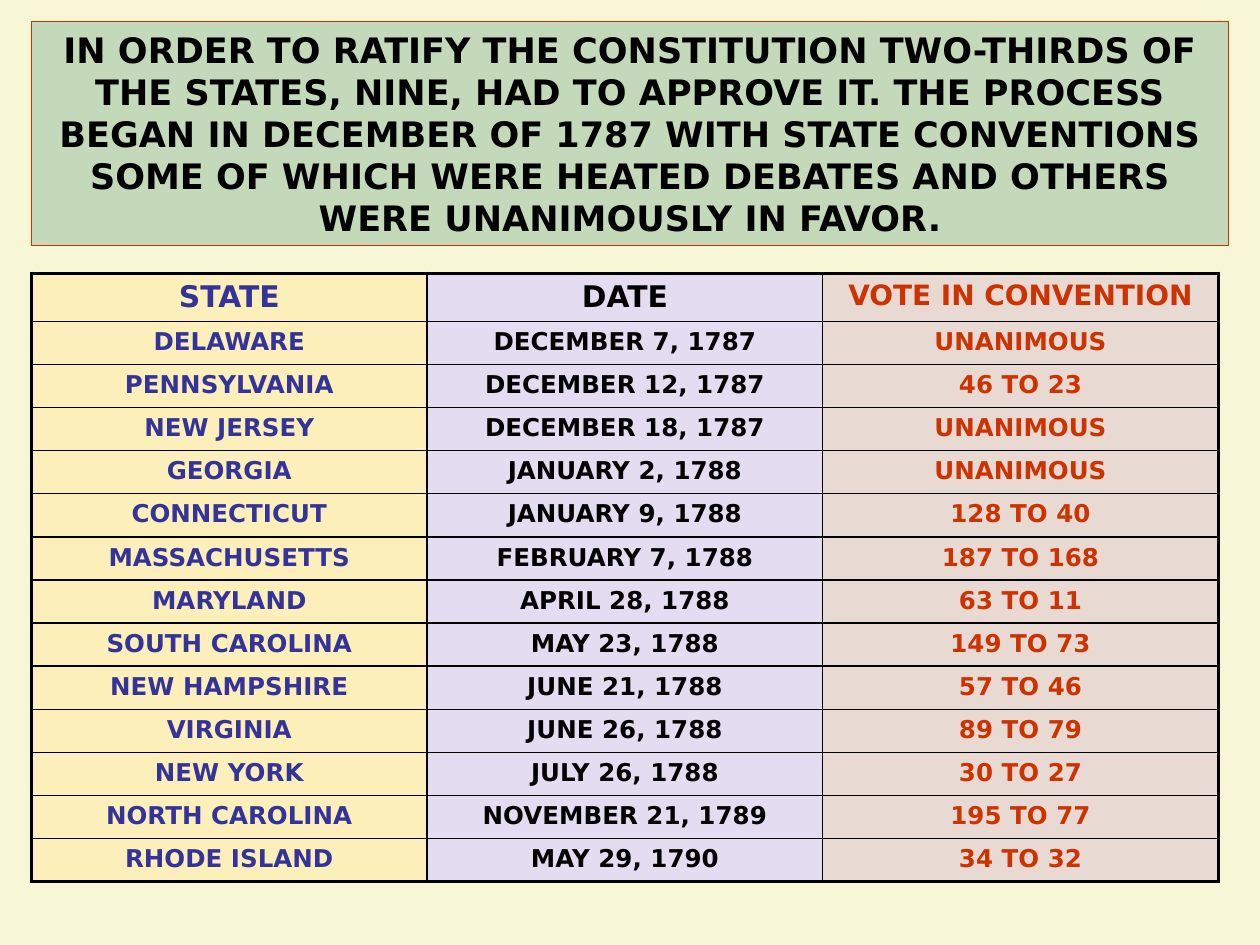
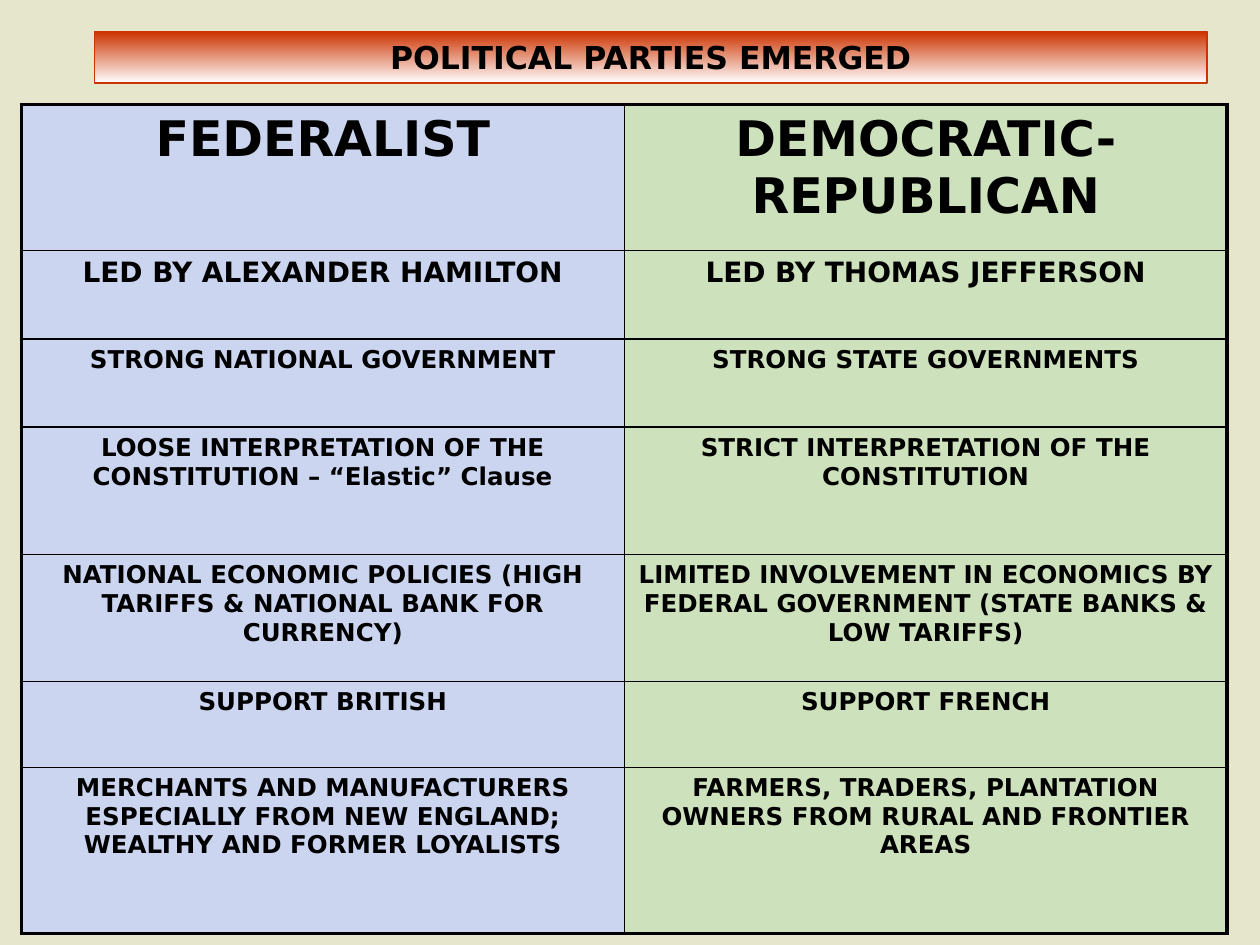
import pptx
import pptx.dml.color
import pptx.enum.shapes
import pptx.enum.text
import pptx.oxml
import pptx.oxml.ns
import pptx.util

Inches = pptx.util.Inches
Pt = pptx.util.Pt
RGBColor = pptx.dml.color.RGBColor

BLACK = RGBColor(0x00, 0x00, 0x00)
WHITE = RGBColor(0xFF, 0xFF, 0xFF)
RED = RGBColor(0xCC, 0x33, 0x00)
BLUE = RGBColor(0x33, 0x33, 0x99)
CREAM = RGBColor(0xF7, 0xF7, 0xD6)
KHAKI = RGBColor(0xE6, 0xE6, 0xCC)
SAGE = RGBColor(0xC4, 0xD8, 0xBA)
YELLOW = RGBColor(0xFC, 0xEF, 0xBA)
LILAC = RGBColor(0xE4, 0xDC, 0xF0)
ROSE = RGBColor(0xE9, 0xD9, 0xD3)
SKY = RGBColor(0xCC, 0xD5, 0xF0)
GREEN = RGBColor(0xCE, 0xE1, 0xBD)

RATIFICATION = [
    ("STATE", "DATE", "VOTE IN CONVENTION"),
    ("DELAWARE", "DECEMBER 7, 1787", "UNANIMOUS"),
    ("PENNSYLVANIA", "DECEMBER 12, 1787", "46 TO 23"),
    ("NEW JERSEY", "DECEMBER 18, 1787", "UNANIMOUS"),
    ("GEORGIA", "JANUARY 2, 1788", "UNANIMOUS"),
    ("CONNECTICUT", "JANUARY 9, 1788", "128 TO 40"),
    ("MASSACHUSETTS", "FEBRUARY 7, 1788", "187 TO 168"),
    ("MARYLAND", "APRIL 28, 1788", "63 TO 11"),
    ("SOUTH CAROLINA", "MAY 23, 1788", "149 TO 73"),
    ("NEW HAMPSHIRE", "JUNE 21, 1788", "57 TO 46"),
    ("VIRGINIA", "JUNE 26, 1788", "89 TO 79"),
    ("NEW YORK", "JULY 26, 1788", "30 TO 27"),
    ("NORTH CAROLINA", "NOVEMBER 21, 1789", "195 TO 77"),
    ("RHODE ISLAND", "MAY 29, 1790", "34 TO 32"),
]

PARTIES = [
    ("FEDERALIST", "DEMOCRATIC-REPUBLICAN"),
    ("LED BY ALEXANDER HAMILTON", "LED BY THOMAS JEFFERSON"),
    ("STRONG NATIONAL GOVERNMENT", "STRONG STATE GOVERNMENTS"),
    ("LOOSE INTERPRETATION OF THE CONSTITUTION – “Elastic” Clause",
     "STRICT INTERPRETATION OF THE CONSTITUTION"),
    ("NATIONAL ECONOMIC POLICIES (HIGH TARIFFS & NATIONAL BANK FOR CURRENCY)",
     "LIMITED INVOLVEMENT IN ECONOMICS BY FEDERAL GOVERNMENT (STATE BANKS & LOW TARIFFS)"),
    ("SUPPORT BRITISH", "SUPPORT FRENCH"),
    ("MERCHANTS AND MANUFACTURERS ESPECIALLY FROM NEW ENGLAND; WEALTHY AND FORMER LOYALISTS",
     "FARMERS, TRADERS, PLANTATION OWNERS FROM RURAL AND FRONTIER AREAS"),
]


class Deck:
    font_name = "DejaVu Sans"
    outer_border = Pt(2.25)
    inner_border = Pt(1)

    def __init__(self):
        self.presentation = pptx.Presentation()
        self.presentation.slide_width = Inches(10)
        self.presentation.slide_height = Inches(7.5)
        self.page = None

    def add_page(self, background):
        self.page = self.presentation.slides.add_slide(self.presentation.slide_layouts[6])
        fill = self.page.background.fill
        fill.solid()
        fill.fore_color.rgb = background

    def set_text(self, frame, text, size, color):
        para = frame.paragraphs[0]
        para.text = text
        para.alignment = pptx.enum.text.PP_ALIGN.CENTER
        para.font.name = self.font_name
        para.font.size = Pt(size)
        para.font.bold = True
        para.font.color.rgb = color

    def add_banner(self, place, text, size, colors):
        box = self.page.shapes.add_shape(
            pptx.enum.shapes.MSO_SHAPE.RECTANGLE, *map(Inches, place))
        box.shadow.inherit = False
        if len(colors) == 1:
            box.fill.solid()
            box.fill.fore_color.rgb = colors[0]
        else:
            box.fill.gradient()
            box.fill.gradient_angle = 270
            for stop, color in zip(box.fill.gradient_stops, colors):
                stop.color.rgb = color
        box.line.color.rgb = RED
        box.line.width = Pt(0.75)
        frame = box.text_frame
        frame.word_wrap = True
        frame.vertical_anchor = pptx.enum.text.MSO_ANCHOR.MIDDLE
        self.set_text(frame, text, size, BLACK)

    def add_borders(self, cell, outer_sides):
        properties = cell._tc.get_or_add_tcPr()
        for index, side in enumerate("LRTB"):
            width = self.outer_border if side in outer_sides else self.inner_border
            line = pptx.oxml.parse_xml(
                f'<a:ln{side} {pptx.oxml.ns.nsdecls("a")} w="{width}">'
                f'<a:solidFill><a:srgbClr val="{BLACK}"/></a:solidFill></a:ln{side}>')
            properties.insert(index, line)

    def add_table(self, place, rows, heights, fills, colors, size_of):
        row_count, column_count = len(rows), len(fills)
        table = self.page.shapes.add_table(
            row_count, column_count, *map(Inches, place)).table
        table.first_row = table.horz_banding = False
        for column in table.columns:
            column.width = Inches(place[2] / column_count)
        for row, height in zip(table.rows, heights):
            row.height = Inches(height)
        for row_index, texts in enumerate(rows):
            for column_index, text in enumerate(texts):
                cell = table.cell(row_index, column_index)
                cell.fill.solid()
                cell.fill.fore_color.rgb = fills[column_index]
                edges = {"L": column_index == 0, "R": column_index == column_count - 1,
                         "T": row_index == 0, "B": row_index == row_count - 1}
                self.add_borders(cell, [side for side, outer in edges.items() if outer])
                self.set_text(cell.text_frame, text, size_of(row_index, column_index),
                              colors[column_index])


def ratification_size(row, column):
    if row > 0:
        return 14
    return 16 if column == 2 else 17


def party_size(row, column):
    return {0: 28, 1: 16}.get(row, 14)


def main():
    deck = Deck()

    deck.add_page(CREAM)
    deck.add_banner(
        (0.25, 0.17, 9.5, 1.78),
        "IN ORDER TO RATIFY THE CONSTITUTION TWO-THIRDS OF THE STATES, NINE, HAD TO "
        "APPROVE IT. THE PROCESS BEGAN IN DECEMBER OF 1787 WITH STATE CONVENTIONS SOME "
        "OF WHICH WERE HEATED DEBATES AND OTHERS WERE UNANIMOUSLY IN FAVOR.",
        20, [SAGE])
    state_count = len(RATIFICATION) - 1
    deck.add_table(
        (0.25, 2.17, 9.42, 4.83), RATIFICATION,
        [0.38] + [(4.83 - 0.38) / state_count] * state_count,
        [YELLOW, LILAC, ROSE], [BLUE, BLACK, RED], ratification_size)

    deck.add_page(KHAKI)
    deck.add_banner((0.75, 0.25, 8.83, 0.41), "POLITICAL PARTIES EMERGED", 18, [RED, WHITE])
    deck.add_table(
        (0.17, 0.83, 9.57, 6.58), PARTIES, [1.16, 0.7, 0.7, 1.01, 1.01, 0.68, 1.32],
        [SKY, GREEN], [BLACK, BLACK], party_size)

    deck.presentation.save("out.pptx")


if __name__ == "__main__":
    main()
